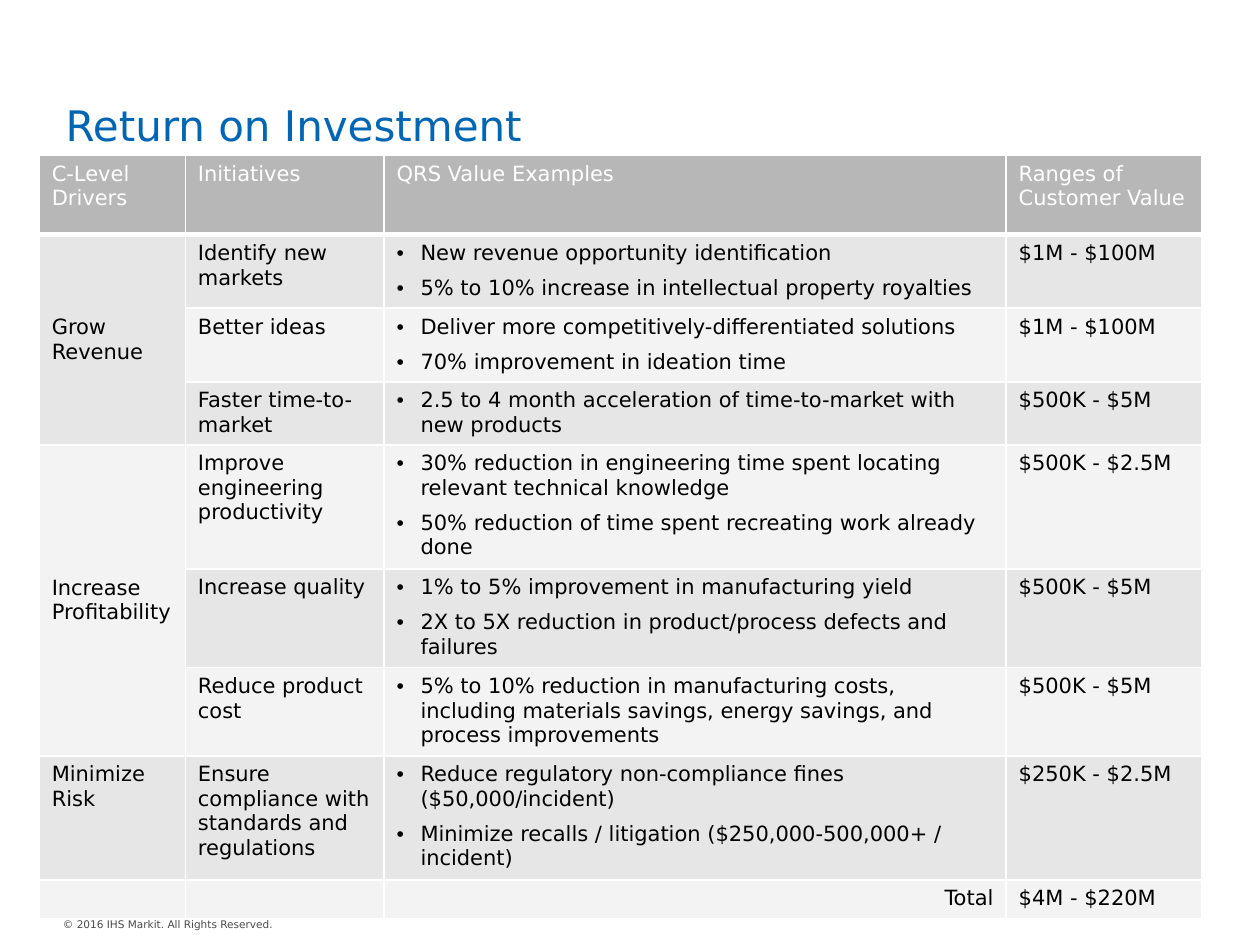
from dataclasses import dataclass

from lxml.etree import SubElement
from pptx import Presentation
from pptx.dml.color import RGBColor
from pptx.enum.text import MSO_ANCHOR as Anchor, MSO_AUTO_SIZE as AutoSize, PP_ALIGN as Align
from pptx.oxml.ns import qn
from pptx.util import Cm, Pt


@dataclass(frozen=True)
class Theme:
    font: str = "DejaVu Sans"
    title_color: str = "0066B3"
    footer_color: str = "4B4B4B"
    text_color: str = "000000"
    header_color: str = "FFFFFF"
    header_fill: str = "B8B7B8"
    bands: tuple = ("E6E6E6", "F3F3F3")
    border: str = "FFFFFF"
    title_size: int = 24
    table_size: int = 12
    footer_size: int = 6


THEME = Theme()

HEADINGS = ["C-Level Drivers", "Initiatives", "QRS Value Examples", "Ranges of Customer Value"]
DRIVERS = [
    ("Grow Revenue", [
        ("Identify new markets",
         ["New revenue opportunity identification",
          "5% to 10% increase in intellectual property royalties"], "$1M - $100M"),
        ("Better ideas",
         ["Deliver more competitively-differentiated solutions",
          "70% improvement in ideation time"], "$1M - $100M"),
        ("Faster time-to-market",
         ["2.5 to 4 month acceleration of time-to-market with new products"], "$500K - $5M"),
    ]),
    ("Increase Profitability", [
        ("Improve engineering productivity",
         ["30% reduction in engineering time spent locating relevant technical knowledge",
          "50% reduction of time spent recreating work already done"], "$500K - $2.5M"),
        ("Increase quality",
         ["1% to 5% improvement in manufacturing yield",
          "2X to 5X reduction in product/process defects and failures"], "$500K - $5M"),
        ("Reduce product cost",
         ["5% to 10% reduction in manufacturing costs, including materials savings, "
          "energy savings, and process improvements"], "$500K - $5M"),
    ]),
    ("Minimize Risk", [
        ("Ensure compliance with standards and regulations",
         ["Reduce regulatory non-compliance fines ($50,000/incident)",
          "Minimize recalls / litigation ($250,000-500,000+ / incident)"], "$250K - $2.5M"),
    ]),
]
TOTAL = ["", "", "Total", "$4M - $220M"]
COLUMN_WIDTHS = [2.95, 4.01, 12.55, 3.94]
ROW_HEIGHTS = [1.6, 1.32, 1.32, 1.14, 2.24, 1.78, 1.6, 2.24, 0.79]


def style(paragraph, size, color):
    font = paragraph.font
    font.name, font.size, font.bold = THEME.font, Pt(size), False
    font.color.rgb = RGBColor.from_string(color)


def add_bullet(paragraph):
    properties = paragraph._p.get_or_add_pPr()
    properties.set("marL", str(Cm(0.48)))
    properties.set("indent", str(-Cm(0.48)))
    SubElement(properties, qn("a:buFont"), typeface="Arial")
    SubElement(properties, qn("a:buChar"), char="•")
    paragraph.space_after = Pt(6)


def format_cell(cell, fill, bottom_width):
    properties = cell._tc.get_or_add_tcPr()
    for side, width in zip("LRTB", (1, 1, 1, bottom_width)):
        line = SubElement(properties, qn(f"a:ln{side}"), w=str(Pt(width)))
        SubElement(SubElement(line, qn("a:solidFill")), qn("a:srgbClr"), val=THEME.border)
    cell.fill.solid()
    cell.fill.fore_color.rgb = RGBColor.from_string(fill)


def write_cell(cell, lines, color, bulleted=False):
    cell.text = "\n".join(lines)
    for paragraph in cell.text_frame.paragraphs:
        if bulleted:
            add_bullet(paragraph)
        style(paragraph, THEME.table_size, color)
        if not paragraph.text:
            SubElement(paragraph._p, qn("a:endParaRPr"), sz=str(THEME.table_size * 100))


def place_title(slide, left, top, width, height):
    title = slide.shapes.title
    title.left, title.top, title.width, title.height = left, top, width, height
    frame = title.text_frame
    frame.text = "Return on Investment"
    frame.auto_size = AutoSize.NONE
    frame.vertical_anchor = Anchor.BOTTOM
    heading = frame.paragraphs[0]
    heading.alignment = Align.LEFT
    style(heading, THEME.title_size, THEME.title_color)


def place_value_table(slide, left, top, width, height):
    frame = slide.shapes.add_table(len(ROW_HEIGHTS), len(HEADINGS), left, top, width, height)
    table = frame.table
    table.first_row = table.horz_banding = False
    for column, share in zip(table.columns, COLUMN_WIDTHS):
        column.width = int(width * share / sum(COLUMN_WIDTHS))
    for row, row_height in zip(table.rows, ROW_HEIGHTS):
        row.height = Cm(row_height)
    frame.height = height

    for index, row in enumerate(table.rows):
        fill = THEME.bands[(index - 1) % 2] if index else THEME.header_fill
        for cell in row.cells:
            format_cell(cell, fill, 1 if index else 3)

    for column, heading in enumerate(HEADINGS):
        write_cell(table.cell(0, column), [heading], THEME.header_color)

    row = 1
    for driver, initiatives in DRIVERS:
        driver_cell = table.cell(row, 0)
        if len(initiatives) > 1:
            driver_cell.merge(table.cell(row + len(initiatives) - 1, 0))
            driver_cell.vertical_anchor = Anchor.MIDDLE
        write_cell(driver_cell, [driver], THEME.text_color)
        for initiative, examples, value_range in initiatives:
            write_cell(table.cell(row, 1), [initiative], THEME.text_color)
            write_cell(table.cell(row, 2), examples, THEME.text_color, bulleted=True)
            write_cell(table.cell(row, 3), [value_range], THEME.text_color)
            row += 1

    for column, entry in enumerate(TOTAL):
        write_cell(table.cell(row, column), [entry], THEME.text_color)
    table.cell(row, 2).text_frame.paragraphs[0].alignment = Align.RIGHT


def place_footer(slide, left, top, width, height):
    frame = slide.shapes.add_textbox(left, top, width, height).text_frame
    frame.word_wrap = False
    frame.auto_size = AutoSize.SHAPE_TO_FIT_TEXT
    frame.text = "© 2016 IHS Markit. All Rights Reserved."
    style(frame.paragraphs[0], THEME.footer_size, THEME.footer_color)


def main():
    deck = Presentation()
    deck.slide_width, deck.slide_height = Cm(25.4), Cm(19.05)
    slide = deck.slides.add_slide(deck.slide_layouts[5])
    place_footer(slide, Cm(1.02), Cm(18.39), Cm(4.88), Cm(0.5))
    place_title(slide, Cm(1.07), Cm(0), Cm(21.8), Cm(3.15))
    place_value_table(slide, Cm(0.79), Cm(3.13), Cm(23.43), Cm(15.57))
    deck.save("out.pptx")


if __name__ == "__main__":
    main()
